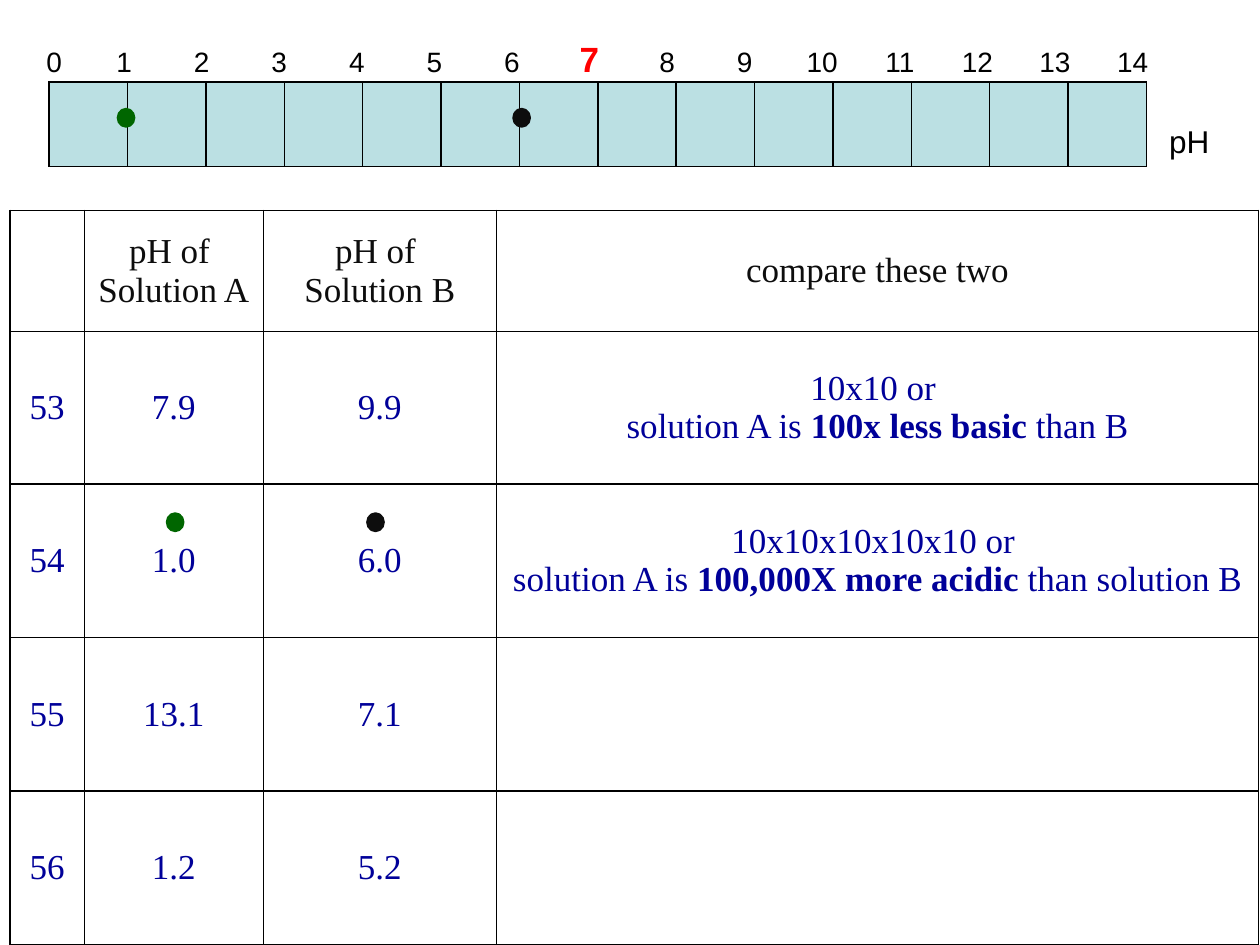
from pptx import Presentation
from pptx.dml.color import RGBColor
from pptx.enum.shapes import MSO_SHAPE
from pptx.enum.text import MSO_ANCHOR, MSO_AUTO_SIZE, PP_ALIGN
from pptx.oxml import parse_xml
from pptx.oxml.ns import nsdecls
from pptx.util import Inches, Pt

BLACK, INK, NAVY, RED, GREEN = "000000", "0D0D0D", "000099", "FF0000", "006600"
WHITE, AQUA = "FFFFFF", "BBE0E3"
COLS, ROWS = 100, 75
SCALE_MAX, NEUTRAL = 14, 7
SCALE_STEP = 86.2 / SCALE_MAX

LABEL = {"name": "Arial", "size": Pt(16), "bold": False, "color": BLACK}
NEUTRAL_LABEL = LABEL | {"size": Pt(20), "bold": True, "color": RED}
UNIT = LABEL | {"size": Pt(18)}
HEADER = {"name": "Times New Roman", "size": Pt(20), "bold": False, "color": INK}
ANSWER = HEADER | {"color": NAVY}
STRONG = ANSWER | {"bold": True}


def rgb(value):
    return RGBColor.from_string(value)


class Board:
    """Draw styled elements on one slide measured in grid columns and rows."""

    def __init__(self, prs):
        self.dx, self.dy = prs.slide_width / COLS, prs.slide_height / ROWS
        self.s = prs.slides.add_slide(prs.slide_layouts[6])

    def x(self, cols):
        return round(cols * self.dx)

    def y(self, rows):
        return round(rows * self.dy)

    def box(self, left, top, width, height):
        return self.x(left), self.y(top), self.x(width), self.y(height)

    def add_runs(self, p, runs):
        for text, style in runs:
            for i, line in enumerate(text.split("\n")):
                if i:
                    p.add_line_break()
                r = p.add_run()
                r.text = line
                for key, value in style.items():
                    if key == "color":
                        r.font.color.rgb = rgb(value)
                    else:
                        setattr(r.font, key, value)

    def text(self, at, runs, tabs=()):
        tf = self.s.shapes.add_textbox(*self.box(*at)).text_frame
        tf.word_wrap = True
        tf.auto_size = MSO_AUTO_SIZE.SHAPE_TO_FIT_TEXT
        p = tf.paragraphs[0]
        p.space_before = Pt(2)
        if tabs:
            stops = "".join(f'<a:tab pos="{self.x(t)}" algn="ctr"/>' for t in tabs)
            p._p.get_or_add_pPr().append(
                parse_xml(f'<a:tabLst {nsdecls("a")}>{stops}</a:tabLst>'))
        self.add_runs(p, runs)

    def border(self, cell):
        pr = cell._tc.get_or_add_tcPr()
        for i, side in enumerate(("lnL", "lnR", "lnT", "lnB")):
            pr.insert(i, parse_xml(
                f'<a:{side} {nsdecls("a")} w="{Pt(1)}"><a:solidFill>'
                f'<a:srgbClr val="{BLACK}"/></a:solidFill></a:{side}>'))

    def table(self, left, top, widths, heights, fill, content):
        at = self.box(left, top, sum(widths), sum(heights))
        tbl = self.s.shapes.add_table(len(heights), len(widths), *at).table
        tbl.first_row = tbl.horz_banding = False
        for col, width in zip(tbl.columns, widths):
            col.width = self.x(width)
        for row, height, texts in zip(tbl.rows, heights, content):
            row.height = self.y(height)
            for cell, runs in zip(row.cells, texts):
                cell.fill.solid()
                cell.fill.fore_color.rgb = rgb(fill)
                cell.vertical_anchor = MSO_ANCHOR.MIDDLE
                self.border(cell)
                p = cell.text_frame.paragraphs[0]
                p.alignment = PP_ALIGN.CENTER
                self.add_runs(p, runs)

    def dot(self, left, top, color):
        sp = self.s.shapes.add_shape(
            MSO_SHAPE.OVAL, *self.box(left, top, 1.2, 1.3))
        sp.shadow.inherit = False
        sp.fill.solid()
        sp.fill.fore_color.rgb = sp.line.color.rgb = rgb(color)
        sp.line.width = Pt(2)


def comparison(factors, start, strong, end):
    return [(f"{factors} or \n{start}", ANSWER), (strong, STRONG), (end, ANSWER)]


def main():
    prs = Presentation()
    prs.slide_width, prs.slide_height = Inches(10), Inches(7.5)
    board = Board(prs)

    marks = range(1, SCALE_MAX + 1)
    labels = [("0", LABEL)] + [
        (f"\t{n}", NEUTRAL_LABEL if n == NEUTRAL else LABEL) for n in marks]
    board.text((2.7, 2.5, 92.1, 4.4), labels, [n * SCALE_STEP for n in marks])
    board.text((91.8, 9.2, 5.8, 4), [("pH", UNIT)])
    board.table(3.9, 6.5, [87.1 / SCALE_MAX] * SCALE_MAX, [6.7], AQUA,
                [[[]] * SCALE_MAX])

    header = ["", "pH of \nSolution A", "pH of \nSolution B", "compare these two"]
    samples = [
        ("53", "7.9", "9.9", comparison(
            "10x10", "solution A is ", "100x less basic ", "than B")),
        ("54", "1.0", "6.0", comparison(
            "10x10x10x10x10", "solution A is ", "100,000X more acidic ",
            "than solution B")),
        ("55", "13.1", "7.1", []),
        ("56", "1.2", "5.2", []),
    ]
    content = [[[(text, HEADER)] if text else [] for text in header]]
    content += [[[(v, ANSWER)] for v in values] + [result]
                for *values, result in samples]
    board.table(0.8, 16.7, [5.9, 14.2, 18.5, 60.5],
                [9.6, 12.1] + [12.2] * 3, WHITE, content)

    for color, scale_left, table_left in ((GREEN, 9.4, 13.3), (INK, 40.8, 29.2)):
        board.dot(scale_left, 8.7, color)
        board.dot(table_left, 40.8, color)
    prs.save("out.pptx")


if __name__ == "__main__":
    main()
